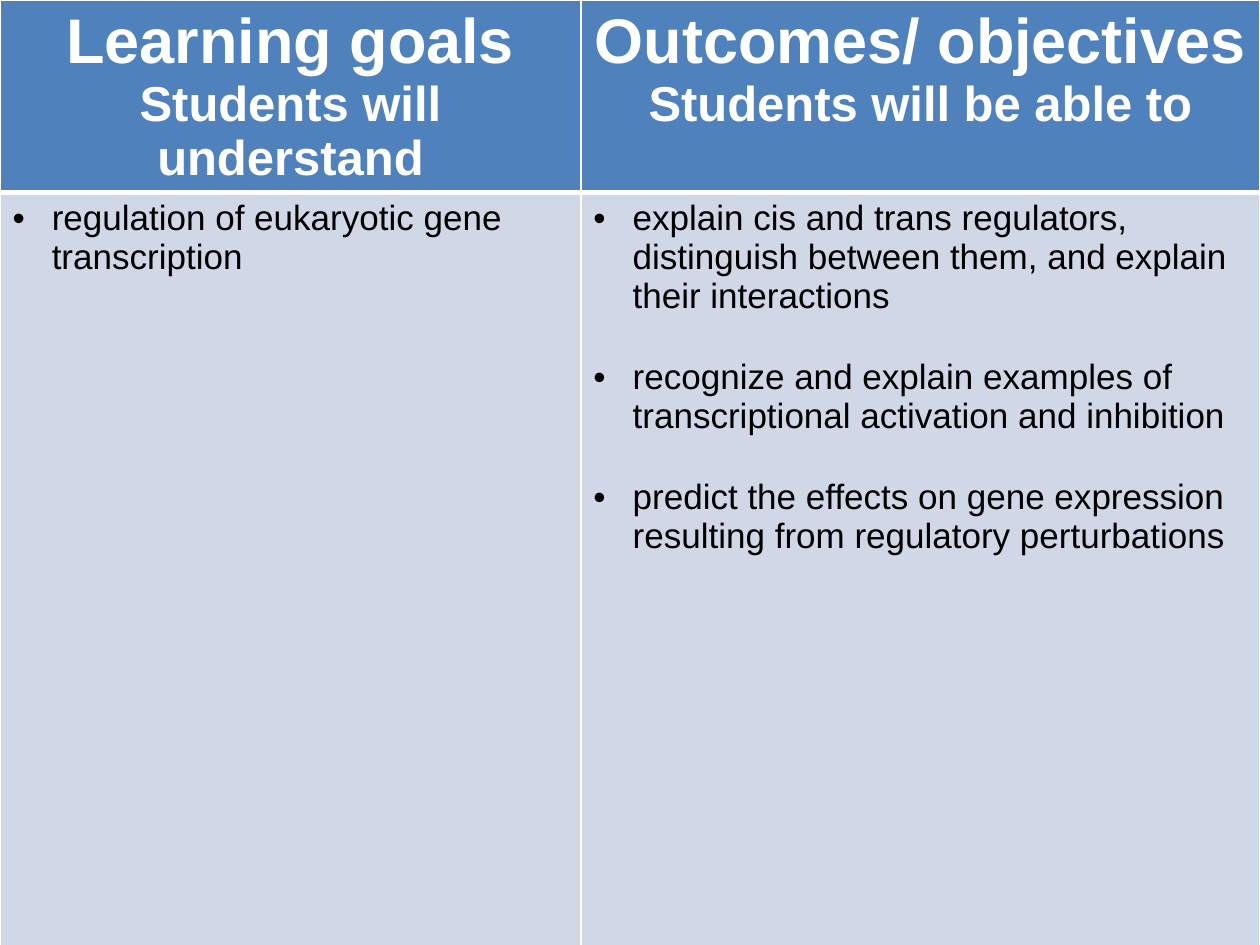
from lxml import etree
from pptx import Presentation
from pptx.dml.color import RGBColor
from pptx.enum.text import PP_ALIGN
from pptx.oxml.ns import qn
from pptx.util import Cm, Pt

CENTER, LEFT = PP_ALIGN.CENTER, PP_ALIGN.LEFT
WHITE, BLACK, BLUE, PALE = "FFFFFF", "000000", "4F81BD", "D0D8E8"
WIDE, HIGH = 25.4, 19.05
SPLIT, HEAD = 11.71, 3.84

HEADS = [
    ("Learning goals", "Students will understand"),
    ("Outcomes/ objectives", "Students will be able to"),
]
LISTS = [
    ["regulation of eukaryotic gene transcription"],
    [
        "explain cis and trans regulators, distinguish between them, "
        "and explain their interactions",
        "recognize and explain examples of transcriptional activation and inhibition",
        "predict the effects on gene expression resulting from regulatory perturbations",
    ],
]


def tint(code):
    """Turn a hex string into a colour."""
    return RGBColor.from_string(code)


def write(frame, text, first=False, size=20, color=BLACK, bold=False,
          align=LEFT, bullet=False, gap=0):
    """Add one formatted paragraph to a text frame."""
    para = frame.paragraphs[0] if first else frame.add_paragraph()
    if bullet:
        props = para._p.get_or_add_pPr()
        indent = Cm(0.79)
        props.set("marL", str(indent))
        props.set("indent", str(-indent))
        etree.SubElement(props, qn("a:buFont"), typeface="Arial")
        etree.SubElement(props, qn("a:buChar"), char="•")
    para.alignment = align
    para.space_before = Pt(0 if first else gap)
    run = para.add_run()
    run.text = text
    font = run.font
    font.name, font.size, font.bold = "Arial", Pt(size), bold
    font.color.rgb = tint(color)


def style(cell, fill, top=1, base=1):
    """Give a cell its white borders and its fill."""
    props = cell._tc.get_or_add_tcPr()
    for side, width in (("L", 1), ("R", 1), ("T", top), ("B", base)):
        line = etree.SubElement(props, qn(f"a:ln{side}"), w=str(Pt(width)))
        solid = etree.SubElement(line, qn("a:solidFill"))
        etree.SubElement(solid, qn("a:srgbClr"), val=WHITE)
    cell.fill.solid()
    cell.fill.fore_color.rgb = tint(fill)


def head(cell, title, lead):
    """Fill a header cell with its title and lead-in."""
    style(cell, BLUE, base=3)
    for text, size in ((title, 36), (lead, 28)):
        write(cell.text_frame, text, first=text == title, size=size,
              color=WHITE, bold=True, align=CENTER)


def points(cell, items):
    """Fill a body cell with a bulleted list."""
    style(cell, PALE, top=3)
    for spot, text in enumerate(items):
        write(cell.text_frame, text, first=spot == 0, bullet=True, gap=24)


def goals(slide, left, top, width, height):
    """Place the table of goals and outcomes in the given box."""
    table = slide.shapes.add_table(
        2, 2, Cm(left), Cm(top), Cm(width), Cm(height)).table
    for col, size in zip(table.columns, (SPLIT, width - SPLIT)):
        col.width = Cm(size)
    for row, size in zip(table.rows, (HEAD, height - HEAD)):
        row.height = Cm(size)
    for col, (names, items) in enumerate(zip(HEADS, LISTS)):
        head(table.cell(0, col), *names)
        points(table.cell(1, col), items)


def main():
    """Build the slide and save it."""
    deck = Presentation()
    deck.slide_width, deck.slide_height = Cm(WIDE), Cm(HIGH)
    slide = deck.slides.add_slide(deck.slide_layouts[6])
    goals(slide, 0, 0, WIDE, HIGH)
    deck.save("out.pptx")


if __name__ == "__main__":
    main()
